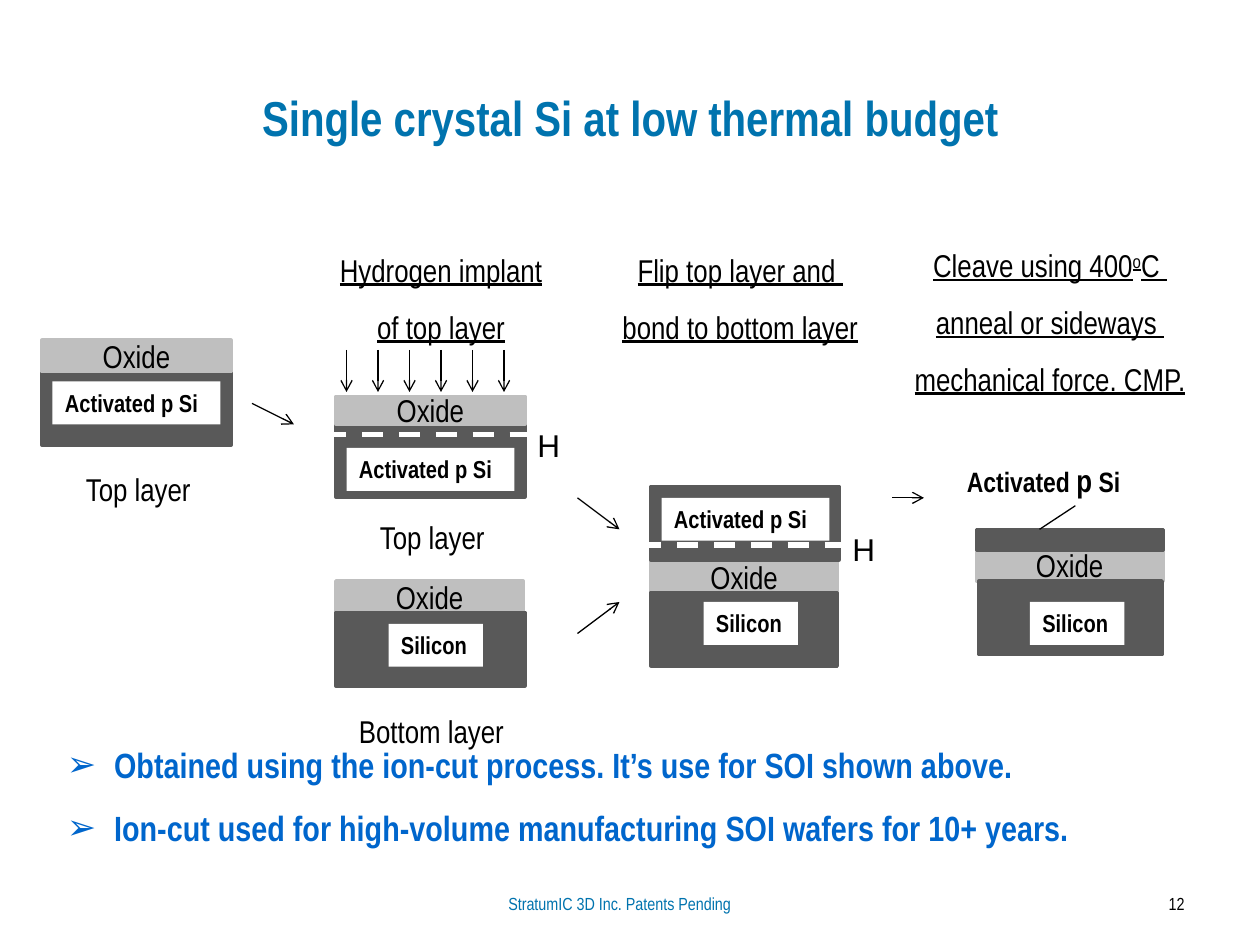
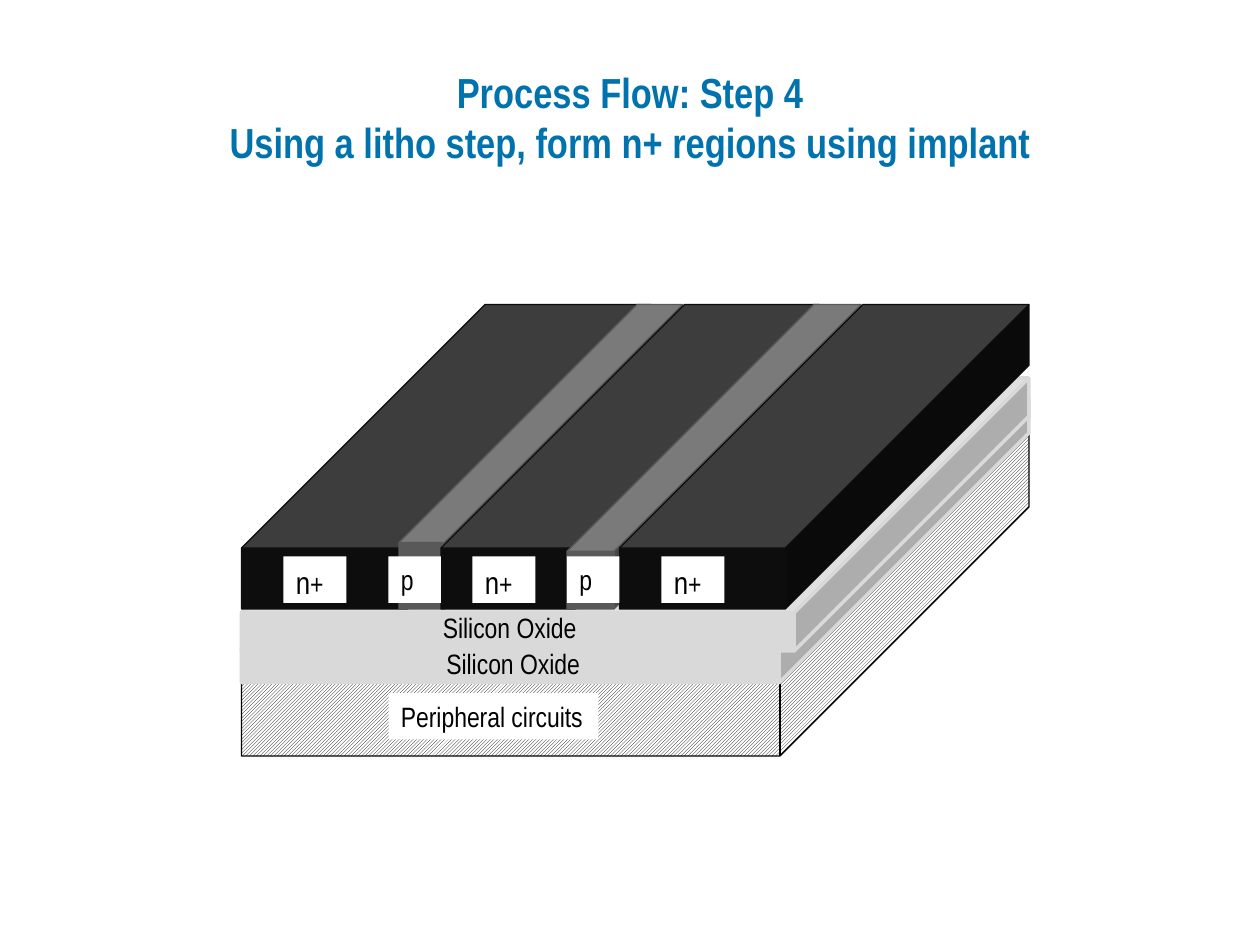
import pptx
import pptx.util
import pptx.dml.color
import pptx.enum.dml
import pptx.enum.shapes
import pptx.enum.text
import pptx.oxml
import pptx.oxml.ns

Pt = pptx.util.Pt
SHAPE = pptx.enum.shapes.MSO_SHAPE
ALIGN = pptx.enum.text.PP_ALIGN
ANCHOR = pptx.enum.text.MSO_ANCHOR

COLORS = {
    "title": "0073AE", "bullet": "0066CC", "text": "000000", "line": "000000",
    "white": "FFFFFF", "silicon": "595959", "oxide": "BFBFBF",
    "buried oxide": "D9D9D9", "n+": "0D0D0D", "p": "595959",
}
FONT = "Arial Narrow"
TITLE_BOX = (36, 21.6, 648, 90)

# Slide 1: ion-cut process
ION_CUT_TITLE = "Single crystal Si at low thermal budget"
ION_CUT_POINTS = [
    "Obtained using the ion-cut process. It’s use for SOI shown above.",
    "Ion-cut used for high-volume manufacturing SOI wafers for 10+ years.",
]
POINTS_BOX = (31, 409.5, 648, 80)
FOOTER = ("StratumIC 3D Inc. Patents Pending", (240, 507, 228, 19))
PAGE_NUMBER = ("12", (604, 507, 80, 24))

# material, box; listed from back to front
LAYERS = [
    ("silicon", (24, 212.4, 108, 42)),
    ("oxide", (24, 194.4, 108, 18)),
    ("silicon", (192, 242, 108, 42)),
    ("oxide", (192, 226.5, 108, 16)),
    ("oxide", (192, 332, 107, 18)),
    ("silicon", (192, 350, 108, 42)),
    ("oxide", (372, 320.5, 106.5, 18)),
    ("silicon", (372, 278, 107.5, 42)),
    ("silicon", (372, 338.5, 106.5, 42)),
    ("oxide", (558, 314, 106.5, 18)),
    ("silicon", (558, 302.5, 107, 12)),
    ("silicon", (559.5, 332, 104.5, 42)),
]
LAYER_TAGS = [
    ("Activated p Si", 96, [(30, 218), (198, 256), (378, 284.5)]),
    ("Silicon", 54, [(222, 356.5), (402, 344), (588.5, 344)]),
]
CLEAVED_TAG = [("Activated ", 16), ("p", 18), (" Si", 16)]
CLEAVED_TAG_BOX = (545.5, 260, 138, 29)
CLEAVED_LAYER_POINT = (594, 302.5)

HYDROGEN_PLANES = [((186, 248.5), (330, 248.5)), ((366, 311.5), (494.5, 311.5))]
HYDROGEN_MARKS = [(300, 240), (480, 299.5)]
IMPLANT_ARROWS = [((198 + 18 * i, 200), (198 + 18 * i, 224)) for i in range(6)]
STEP_ARROWS = [
    ((144, 230.5), (168, 242.5)),
    ((330, 284.5), (354, 302.5)),
    ((330, 362), (354, 344)),
    ((510, 284.5), (528, 284.5)),
]
WAFER_NAMES = [
    ("Top layer", (42, 254, 168, 44.5)),
    ("Top layer", (210, 281.5, 168, 44.5)),
    ("Bottom layer", (198, 392.5, 132, 44.5)),
]
STEP_HEADINGS = [
    (["Hydrogen implant", "of top layer"], (186, 129, 132, 44.5)),
    (["Flip top layer and ", "bond to bottom layer"], (348, 129, 150, 44.5)),
    ([[("Cleave using 400", 18), ("o", 18, "superscript"), ("C ", 18)],
      "anneal or sideways ", "mechanical force. CMP."], (504, 126.5, 192, 44.5)),
]

# Slide 2: device block
STEP4_TITLE = "Process Flow: Step 4\vUsing a litho step, form n+ regions using implant"
CIRCUITS_CUBE = ((138, 246, 450, 186), 0.765)
CUBES = [
    ("buried oxide", (138, 228, 450, 162), 0.88, 2),
    ("buried oxide", (138, 216, 450, 156), 0.86, 2),
    ("n+", (138, 174, 234, 174), 0.8, 0.75),
    ("p", (228, 174, 162, 174), 0.84, 0.75),
    ("n+", (252, 174, 216, 174), 0.8, 0.75),
    ("p", (324, 174, 168, 174), 0.84, 0.75),
    ("n+", (354, 174, 234, 174), 0.8, 0.75),
]
OXIDE_NAMES = [("Silicon Oxide", (246, 345.5, 208, 26.5)),
               ("Silicon Oxide", (248, 366, 208, 26.5))]
N_REGION = [("n", 18), ("+", 16)]
REGION_TAGS = [("Peripheral circuits", (222, 396, 120, 26.5))]
REGION_TAGS += [([N_REGION], (x, 318, 36, 26.5)) for x in (162, 270, 378)]
REGION_TAGS += [("p", (x, 318, 30, 26.5)) for x in (222, 324)]


def rgb(name):
    return pptx.dml.color.RGBColor.from_string(COLORS[name])


def points(values):
    return [Pt(value) for value in values]


def write(frame, content, size, color="text", font=FONT, bold=False,
          underline=False, align=ALIGN.LEFT, spacing=None):
    """Fill a frame; a paragraph is a string or a list of (text, size[, "superscript"])."""
    frame.word_wrap = True
    frame.auto_size = pptx.enum.text.MSO_AUTO_SIZE.NONE
    lines = [content] if isinstance(content, str) else content
    for number, line in enumerate(lines):
        paragraph = frame.add_paragraph() if number else frame.paragraphs[0]
        paragraph.alignment = align
        paragraph.space_before = Pt(0)
        if spacing:
            paragraph.line_spacing = spacing
        if isinstance(line, str):
            paragraph.text = line
            sizes = [size] * len(paragraph.runs)
        else:
            for piece in line:
                run = paragraph.add_run()
                run.text = piece[0]
                if "superscript" in piece[2:]:
                    run._r.get_or_add_rPr().set("baseline", "30000")
            sizes = [piece[1] for piece in line]
        for run, run_size in zip(paragraph.runs, sizes):
            run.font.name = font
            run.font.size = Pt(run_size)
            run.font.bold = bold
            run.font.underline = underline
            run.font.color.rgb = rgb(color)


def add_text(slide, content, box, size, **style):
    write(slide.shapes.add_textbox(*points(box)).text_frame, content, size, **style)


def add_block(slide, kind, box, fill, line=None, width=2):
    block = slide.shapes.add_shape(kind, *points(box))
    block.shadow.inherit = False
    if fill:
        block.fill.solid()
        block.fill.fore_color.rgb = rgb(fill)
    if line:
        block.line.color.rgb = rgb(line)
        block.line.width = Pt(width)
    else:
        block.line.fill.background()
    return block


def add_tag(slide, content, box, size, bold=False):
    """White plate with a label."""
    tag = add_block(slide, SHAPE.RECTANGLE, box, "white")
    tag.text_frame.vertical_anchor = ANCHOR.TOP
    write(tag.text_frame, content, size, bold=bold)
    return tag


def add_line(slide, start, end, color="line", width=0.75, arrow=False):
    line = slide.shapes.add_connector(
        pptx.enum.shapes.MSO_CONNECTOR.STRAIGHT, *points(start + end))
    line.line.color.rgb = rgb(color)
    line.line.width = Pt(width)
    if arrow:
        head = pptx.oxml.parse_xml(
            f'<a:tailEnd {pptx.oxml.ns.nsdecls("a")} type="arrow"/>')
        line.line._get_or_add_ln().append(head)
    line._element.spPr.append(
        pptx.oxml.parse_xml(f'<a:effectLst {pptx.oxml.ns.nsdecls("a")}/>'))
    return line


def place(placeholder, box):
    placeholder.left, placeholder.top, placeholder.width, placeholder.height = points(box)


def add_slide(deck, layout, title, size):
    slide = deck.slides.add_slide(deck.slide_layouts[layout])
    heading = slide.shapes.title
    place(heading, TITLE_BOX)
    heading.text_frame.vertical_anchor = ANCHOR.MIDDLE
    write(heading.text_frame, title, size, color="title", bold=True, align=ALIGN.CENTER)
    return slide


def add_points(slide):
    body = slide.placeholders[1]
    place(body, POINTS_BOX)
    write(body.text_frame, ION_CUT_POINTS, 20, color="bullet", bold=True, spacing=1.5)
    for paragraph in body.text_frame.paragraphs:
        properties = paragraph._p.get_or_add_pPr()
        properties.set("marL", str(Pt(27)))
        properties.set("indent", str(-Pt(27)))
        properties.append(pptx.oxml.parse_xml(
            f'<a:buChar {pptx.oxml.ns.nsdecls("a")} char="➢"/>'))


def build_ion_cut(deck):
    slide = add_slide(deck, 1, ION_CUT_TITLE, 28)
    add_points(slide)
    add_text(slide, *FOOTER, 10, color="title", align=ALIGN.CENTER)
    add_text(slide, *PAGE_NUMBER, 10, align=ALIGN.RIGHT)

    for material, box in LAYERS:
        layer = add_block(slide, SHAPE.RECTANGLE, box, material, material)
        if material == "oxide":
            layer.text_frame.vertical_anchor = ANCHOR.MIDDLE
            write(layer.text_frame, "Oxide", 18, align=ALIGN.CENTER)
    for start, end in HYDROGEN_PLANES:
        plane = add_line(slide, start, end, "white", 3)
        plane.line.dash_style = pptx.enum.dml.MSO_LINE.DASH
    for name, width, corners in LAYER_TAGS:
        for corner in corners:
            add_tag(slide, name, corner + (width, 24.5), 14, bold=True)
    cleaved = add_tag(slide, [CLEAVED_TAG], CLEAVED_TAG_BOX, 16, bold=True)
    leader = add_line(slide, CLEAVED_LAYER_POINT, CLEAVED_LAYER_POINT)
    leader.begin_connect(cleaved, 2)

    for start, end in IMPLANT_ARROWS + STEP_ARROWS:
        add_line(slide, start, end, arrow=True)
    for corner in HYDROGEN_MARKS:
        add_text(slide, "H", corner + (36, 26.5), 18, font="Arial")
    for name, box in WAFER_NAMES:
        add_text(slide, name, box, 18, spacing=1.5)
    for heading, box in STEP_HEADINGS:
        add_text(slide, heading, box, 18, underline=True, align=ALIGN.CENTER, spacing=1.5)


def build_step4(deck):
    slide = add_slide(deck, 5, STEP4_TITLE, 24)
    box, depth = CIRCUITS_CUBE
    circuits = add_block(slide, SHAPE.CUBE, box, None, "line", 0.75)
    circuits.adjustments[0] = depth
    circuits.fill.patterned()
    circuits.fill.pattern = pptx.enum.dml.MSO_PATTERN.DARK_UPWARD_DIAGONAL
    circuits.fill.fore_color.rgb = rgb("line")
    circuits.fill.back_color.rgb = rgb("white")
    for material, box, depth, width in CUBES:
        cube = add_block(slide, SHAPE.CUBE, box, material, material, width)
        cube.adjustments[0] = depth
    for name, box in OXIDE_NAMES:
        add_text(slide, name, box, 16)
    for name, box in REGION_TAGS:
        add_tag(slide, name, box, 16)


def main():
    deck = pptx.Presentation()
    deck.slide_width, deck.slide_height = Pt(720), Pt(540)
    build_ion_cut(deck)
    build_step4(deck)
    deck.save("out.pptx")


if __name__ == "__main__":
    main()
